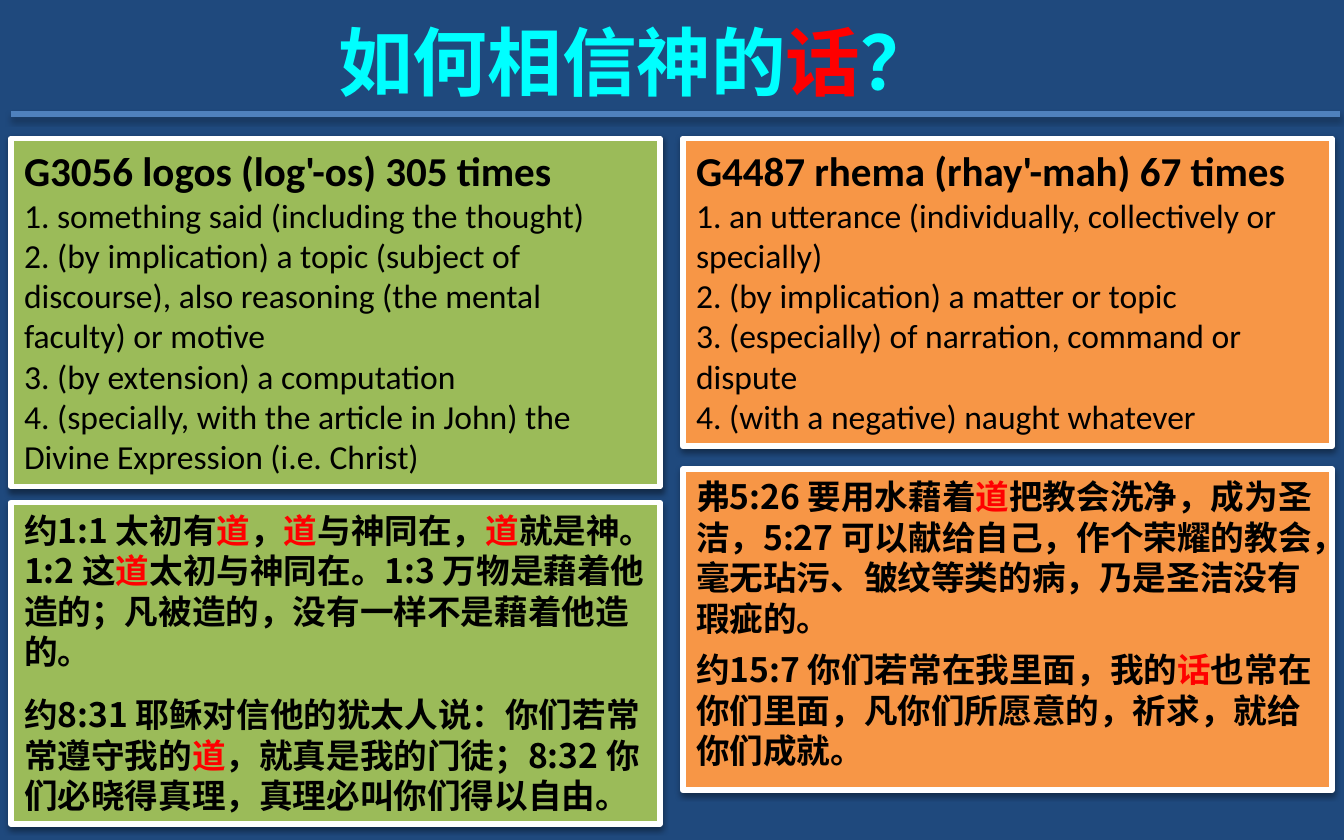
import pptx
import pptx.util
import pptx.dml.color
import pptx.enum.lang
import pptx.enum.shapes
import pptx.enum.text
import pptx.oxml
import pptx.oxml.ns

Pt = pptx.util.Pt
RGB = pptx.dml.color.RGBColor

NAVY = RGB(0x1F, 0x49, 0x7D)
BLUE = RGB(0x4F, 0x81, 0xBD)
GREEN = RGB(0x9B, 0xBB, 0x59)
ORANGE = RGB(0xF7, 0x96, 0x46)
CYAN = RGB(0, 255, 255)
RED = RGB(255, 0, 0)
BLACK = RGB(0, 0, 0)
WHITE = RGB(255, 255, 255)

LATIN = "Calibri"
HAN = "Noto Sans CJK SC"


def write(para, text, font=LATIN, size=18, bold=False, color=BLACK, after=0, pitch=None):
    """Fill a paragraph; words between bars are red."""
    para.alignment = pptx.enum.text.PP_ALIGN.LEFT
    para.space_after = Pt(after)
    if pitch:
        para.line_spacing = Pt(pitch)
    for i, part in enumerate(text.split("|")):
        run = para.add_run()
        run.text = part
        run.font.name = font
        run.font.size = Pt(size)
        run.font.bold = bold
        run.font.color.rgb = RED if i % 2 else color
        if font == HAN:
            run.font.language_id = pptx.enum.lang.MSO_LANGUAGE_ID.SIMPLIFIED_CHINESE
            props = run.font._element
            east = pptx.oxml.parse_xml(
                f'<a:ea {pptx.oxml.ns.nsdecls("a")} typeface="{font}"/>')
            props.find(pptx.oxml.ns.qn("a:latin")).addnext(east)


class Deck:
    def __init__(self, wide, high):
        self.file = pptx.Presentation()
        self.file.slide_width = Pt(wide)
        self.file.slide_height = Pt(high)
        self.slide = self.file.slides.add_slide(self.file.slide_layouts[6])
        fill = self.slide.background.fill
        fill.solid()
        fill.fore_color.rgb = NAVY

    def shade(self, item, dist, alpha):
        item._element.spPr.append(pptx.oxml.parse_xml(
            f'<a:effectLst {pptx.oxml.ns.nsdecls("a")}>'
            f'<a:outerShdw blurRad="{Pt(3.1)}" dist="{Pt(dist)}" dir="5400000" rotWithShape="0">'
            f'<a:srgbClr val="{BLACK}"><a:alpha val="{alpha}000"/></a:srgbClr>'
            '</a:outerShdw></a:effectLst>'))

    def rule(self, left, right, top):
        line = self.slide.shapes.add_connector(
            pptx.enum.shapes.MSO_CONNECTOR.STRAIGHT, Pt(left), Pt(top), Pt(right), Pt(top))
        line.line.color.rgb = BLUE
        line.line.width = Pt(3)
        self.shade(line, 1.8, 35)

    def fill(self, shape, lines):
        frame = shape.text_frame
        frame.word_wrap = True
        frame.vertical_anchor = pptx.enum.text.MSO_ANCHOR.TOP
        for i, (text, style) in enumerate(lines):
            para = frame.add_paragraph() if i else frame.paragraphs[0]
            write(para, text, **style)

    def card(self, left, top, high, color, lines):
        box = self.slide.shapes.add_shape(
            pptx.enum.shapes.MSO_SHAPE.RECTANGLE, Pt(left), Pt(top), Pt(CARD), Pt(high))
        box.fill.solid()
        box.fill.fore_color.rgb = color
        box.line.color.rgb = WHITE
        box.line.width = Pt(3)
        self.shade(box, 1.6, 38)
        self.fill(box, lines)

    def label(self, left, top, wide, high, text, **style):
        box = self.slide.shapes.add_textbox(Pt(left), Pt(top), Pt(wide), Pt(high))
        self.fill(box, [(text, style)])


def terms(head, *items):
    return [(head, dict(size=22, bold=True))] + [(item, {}) for item in items]


def verses(after, *items):
    style = dict(font=HAN, bold=True, after=after, pitch=21.7)
    return [(item, style) for item in items]


# Two columns of cards
LEFT, RIGHT, CARD, TOP = 5.8, 365.8, 347.8, 74.2

deck = Deck(720, 450)
deck.rule(5.8, 717.8, 61.2)

# Verses
deck.card(LEFT, 269.3, 172.1, GREEN, verses(
    12,
    "约1:1 太初有|道|，|道|与神同在，|道|就是神。1:2 这|道|太初与神同在。"
    "1:3 万物是藉着他造的；凡被造的，没有一样不是藉着他造的。",
    "约8:31 耶稣对信他的犹太人说：你们若常常遵守我的|道|，就真是我的门徒；"
    "8:32 你们必晓得真理，真理必叫你们得以自由。"))
deck.card(RIGHT, 251.3, 172.1, ORANGE, verses(
    6,
    "弗5:26 要用水藉着|道|把教会洗净，成为圣洁，5:27 可以献给自己，"
    "作个荣耀的教会，毫无玷污、皱纹等类的病，乃是圣洁没有瑕疵的。",
    "约15:7 你们若常在我里面，我的|话|也常在你们里面，"
    "凡你们所愿意的，祈求，就给你们成就。"))

# Word meanings
deck.card(RIGHT, TOP, 164.9, ORANGE, terms(
    "G4487 rhema (rhay'-mah) 67 times",
    "1. an utterance (individually, collectively or specially)",
    "2. (by implication) a matter or topic",
    "3. (especially) of narration, command or dispute",
    "4. (with a negative) naught whatever"))
deck.card(LEFT, TOP, 186.5, GREEN, terms(
    "G3056 logos (log'-os) 305 times",
    "1. something said (including the thought)",
    "2. (by implication) a topic (subject of discourse), "
    "also reasoning (the mental faculty) or motive",
    "3. (by extension) a computation",
    "4. (specially, with the article in John) the Divine Expression (i.e. Christ)"))

# Title
deck.label(174.2, 5, 338, 55.4, "如何相信神的|话|？",
           font=HAN, size=40, bold=True, color=CYAN, pitch=48)

deck.file.save("out.pptx")
